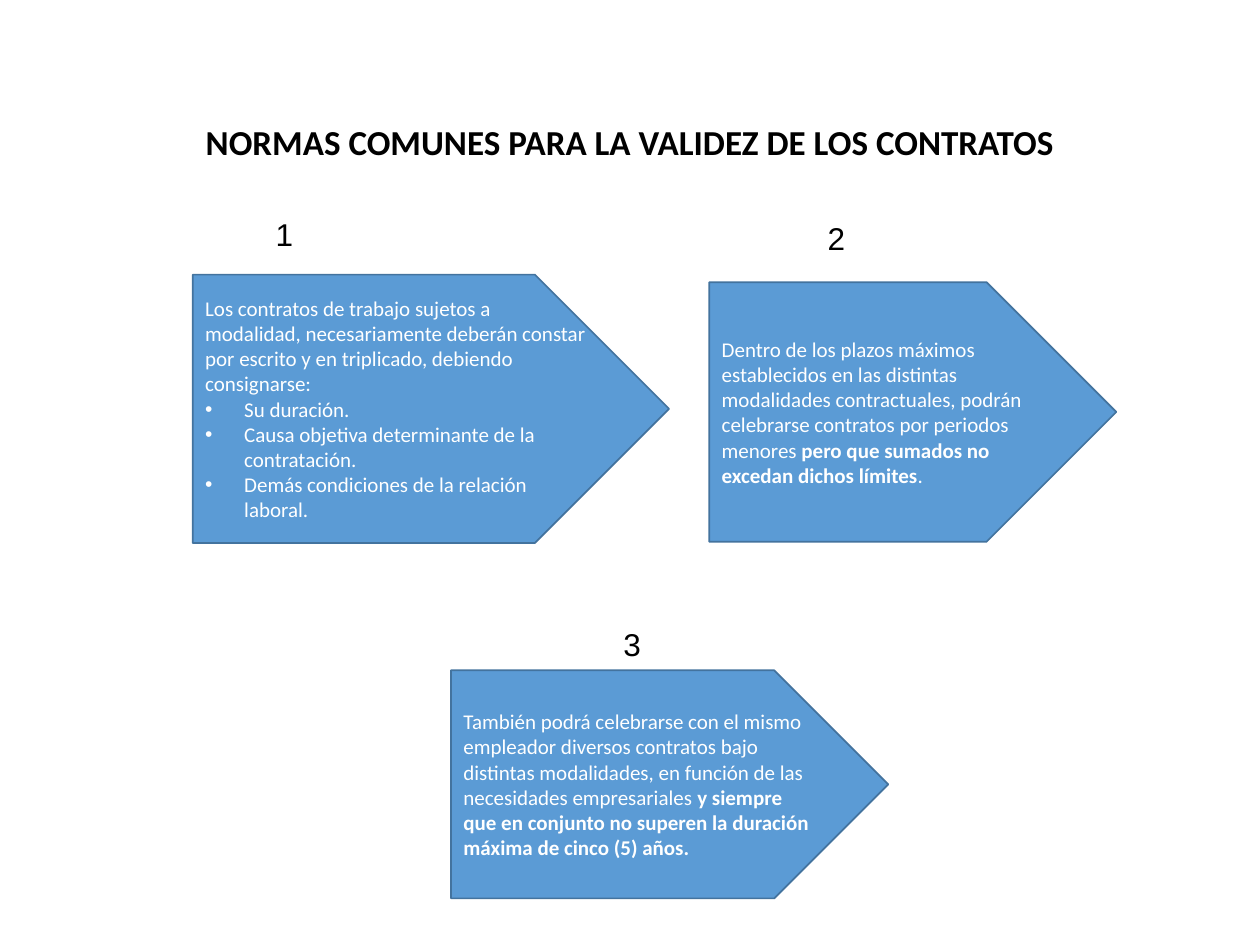
"""Builds the slide on common rules for the validity of contracts."""
from lxml import etree
from pptx import Presentation
from pptx.dml.color import RGBColor
from pptx.enum.shapes import MSO_SHAPE
from pptx.enum.text import MSO_ANCHOR, MSO_AUTO_SIZE, PP_ALIGN
from pptx.oxml.ns import qn
from pptx.util import Inches, Pt

PENTAGON = MSO_SHAPE.PENTAGON
MIDDLE = MSO_ANCHOR.MIDDLE
GROW = MSO_AUTO_SIZE.SHAPE_TO_FIT_TEXT
LEFT, CENTER = PP_ALIGN.LEFT, PP_ALIGN.CENTER
COLORS = {"text": "000000", "arrow": "5B9BD5", "edge": "43739E", "arrow_text": "FFFFFF"}


def style(paragraph, font_name, size, color, align=LEFT):
    paragraph.alignment = align
    paragraph.font.name = font_name
    paragraph.font.size = Pt(size)
    paragraph.font.color.rgb = RGBColor.from_string(COLORS[color])


def add_bullet(paragraph):
    properties = paragraph._p.get_or_add_pPr()
    properties.set("marL", str(Inches(0.31)))
    properties.set("indent", str(-Inches(0.31)))
    etree.SubElement(properties, qn("a:buFont")).set("typeface", "Arial")
    etree.SubElement(properties, qn("a:buChar")).set("char", "•")


prs = Presentation()
prs.slide_width, prs.slide_height = Inches(10), Inches(7.5)
slide = prs.slides.add_slide(prs.slide_layouts[6])

title = slide.shapes.add_textbox(Inches(0.5), Inches(0.91), Inches(9), Inches(0.64))
title.text_frame.word_wrap = True
heading = title.text_frame.paragraphs[0]
heading.text = "NORMAS COMUNES PARA LA VALIDEZ DE LOS CONTRATOS"
style(heading, "Calibri", 20, "text", CENTER)
heading.font.bold = True

rules = [
    {
        "number": "1", "number_at": (2.09, 1.66), "arrow_at": (1.53, 2.18, 3.78, 2.13),
        "plain": "Los contratos de trabajo sujetos a modalidad, necesariamente deberán "
                 "constar por escrito y en triplicado, debiendo consignarse:",
        "bullets": ["Su duración.", "Causa objetiva determinante de la contratación.",
                    "Demás condiciones de la relación laboral."],
    },
    {
        "number": "2", "number_at": (6.47, 1.69), "arrow_at": (5.63, 2.24, 3.23, 2.06),
        "plain": "Dentro de los plazos máximos establecidos en las distintas modalidades "
                 "contractuales, podrán celebrarse contratos por periodos menores ",
        "bold": "pero que sumados no excedan dichos límites",
        "ending": ".",
    },
    {
        "number": "3", "number_at": (4.85, 4.91), "arrow_at": (3.58, 5.32, 3.47, 1.81),
        "plain": "También podrá celebrarse con el mismo empleador diversos contratos bajo "
                 "distintas modalidades, en función de las necesidades empresariales ",
        "bold": "y siempre que en conjunto no superen la duración máxima de cinco (5) años.",
    },
]

for rule in rules:
    arrow = slide.shapes.add_shape(PENTAGON, *map(Inches, rule["arrow_at"]))
    arrow.shadow.inherit = False
    arrow.fill.solid()
    arrow.fill.fore_color.rgb = RGBColor.from_string(COLORS["arrow"])
    arrow.line.color.rgb = RGBColor.from_string(COLORS["edge"])
    arrow.line.width = Pt(1)

    body = arrow.text_frame
    body.word_wrap = True
    body.vertical_anchor = MIDDLE
    statement = body.paragraphs[0]
    style(statement, "Calibri", 12, "arrow_text")
    for part in ("plain", "bold", "ending"):
        if part in rule:
            run = statement.add_run()
            run.text = rule[part]
            if part == "bold":
                run.font.bold = True
    for requirement in rule.get("bullets", []):
        item = body.add_paragraph()
        item.text = requirement
        style(item, "Calibri", 12, "arrow_text")
        add_bullet(item)

    number = slide.shapes.add_textbox(*map(Inches, rule["number_at"]), Inches(0.34), Inches(0.4))
    number.text_frame.word_wrap = False
    number.text_frame.auto_size = GROW
    digit = number.text_frame.paragraphs[0]
    digit.text = rule["number"]
    style(digit, "Arial", 18, "text")

prs.save("out.pptx")
